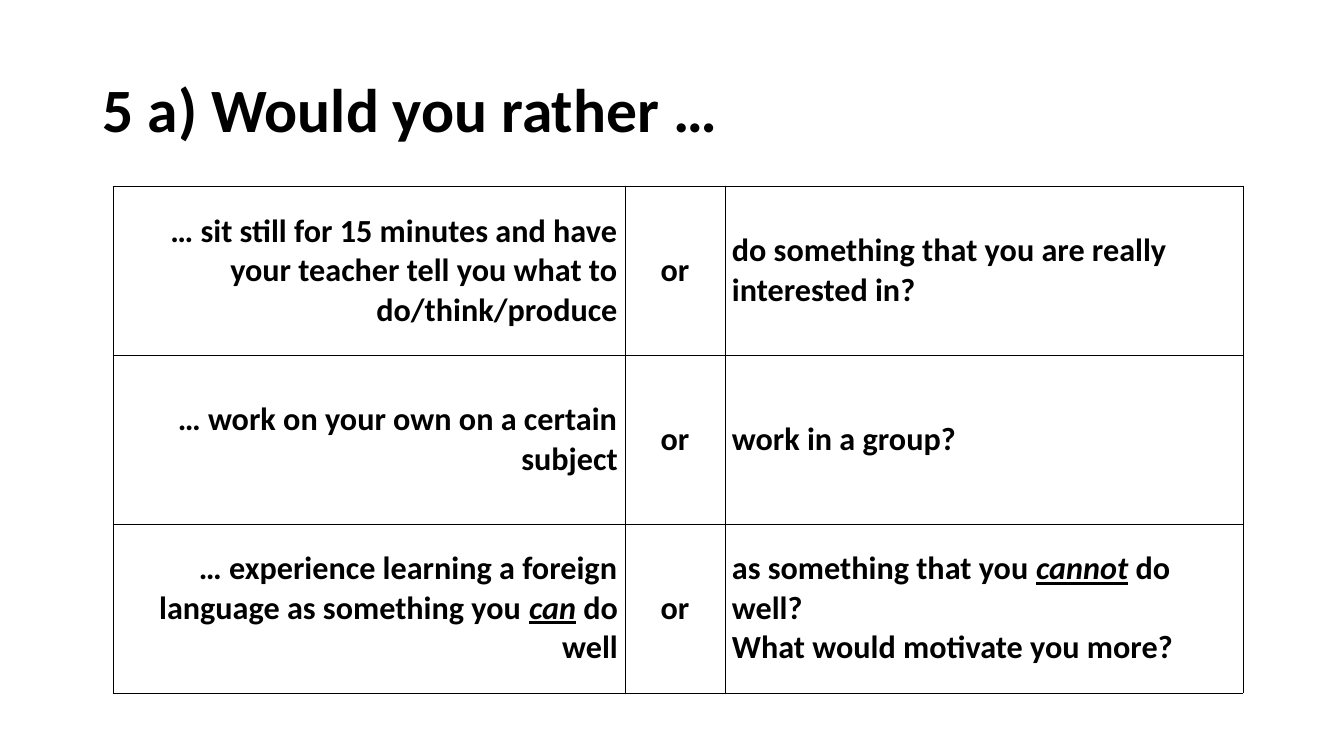
from lxml import etree
from pptx import Presentation
from pptx.dml.color import RGBColor
from pptx.enum.text import MSO_ANCHOR, PP_ALIGN
from pptx.oxml.ns import qn
from pptx.util import Emu, Pt

MID = MSO_ANCHOR.MIDDLE
LEFT, CENTER, RIGHT = PP_ALIGN.LEFT, PP_ALIGN.CENTER, PP_ALIGN.RIGHT
FONT, BLACK, WHITE = "Calibri", "000000", "FFFFFF"

TITLE = "5 a) Would you rather …"
OR = [[("or", False)]]
ROWS = [
    ([[("… sit still for 15 minutes and have your teacher tell you what to do/think/produce", False)]],
     OR,
     [[("do something that you are really interested in?", False)]]),
    ([[("… work on your own on a certain subject", False)]],
     OR,
     [[("work in a group?", False)]]),
    ([[("… experience learning a foreign language as something you ", False),
       ("can", True), (" do well", False)]],
     OR,
     [[("as something that you ", False), ("cannot", True), (" do well?", False)],
      [("What would motivate you more?", False)]]),
]
ALIGNS = [RIGHT, CENTER, LEFT]
WIDTHS = [512, 100, 518]
HEIGHT = 169


def px(n):
    return Emu(round(n * 914400 / 100.8))


def color(code):
    return RGBColor.from_string(code)


def write(frame, paras, size, align, space=1.0):
    frame.word_wrap = True
    for i, runs in enumerate(paras):
        para = frame.paragraphs[0] if i == 0 else frame.add_paragraph()
        para.alignment = align
        para.line_spacing = space
        for text, stress in runs:
            run = para.add_run()
            run.text = text
            font = run.font
            font.name, font.size, font.bold = FONT, Pt(size), True
            font.italic = font.underline = stress
            font.color.rgb = color(BLACK)


def border(cell):
    props = cell._tc.get_or_add_tcPr()
    for i, side in enumerate(("lnL", "lnR", "lnT", "lnB")):
        line = etree.Element(qn("a:" + side), w=str(Pt(0.5)))
        fill = etree.SubElement(line, qn("a:solidFill"))
        etree.SubElement(fill, qn("a:srgbClr"), val=BLACK)
        props.insert(i, line)


def main():
    deck = Presentation()
    deck.slide_width, deck.slide_height = px(1344), px(756)
    slide = deck.slides.add_slide(deck.slide_layouts[6])

    title = slide.shapes.add_textbox(px(93), px(40), px(1159), px(146)).text_frame
    title.vertical_anchor = MID
    write(title, [[(TITLE, False)]], 44, LEFT, 0.9)

    table = slide.shapes.add_table(
        len(ROWS), len(WIDTHS), px(113), px(186),
        px(sum(WIDTHS)), px(HEIGHT * len(ROWS))).table
    table.first_row = table.horz_banding = False
    for col, width in zip(table.columns, WIDTHS):
        col.width = px(width)
    for r, texts in enumerate(ROWS):
        table.rows[r].height = px(HEIGHT)
        for c, paras in enumerate(texts):
            cell = table.cell(r, c)
            cell.vertical_anchor = MID
            cell.margin_left = cell.margin_right = px(7)
            cell.margin_top = cell.margin_bottom = 0
            cell.fill.solid()
            cell.fill.fore_color.rgb = color(WHITE)
            border(cell)
            write(cell.text_frame, paras, 23, ALIGNS[c])

    deck.save("out.pptx")


if __name__ == "__main__":
    main()
